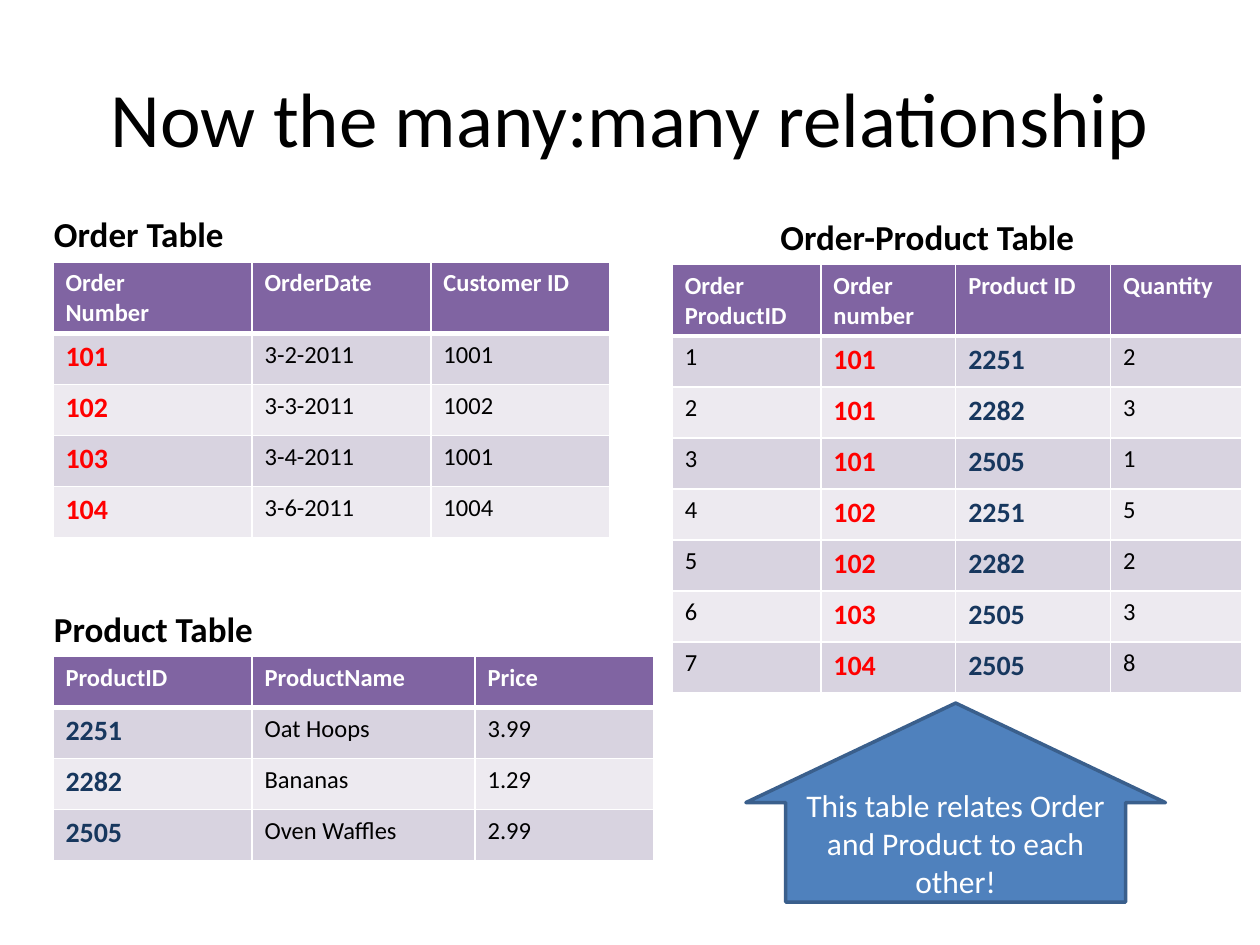
from collections import namedtuple

from lxml import etree
from pptx import Presentation
from pptx import util as u
from pptx.dml.color import RGBColor
from pptx.enum import shapes, text
from pptx.oxml import ns

WHITE = RGBColor(0xFF, 0xFF, 0xFF)
BLACK = RGBColor(0, 0, 0)
RED = RGBColor(0xFF, 0, 0)
NAVY = RGBColor(0x17, 0x37, 0x5E)
PURPLE = RGBColor(0x80, 0x64, 0xA2)
BANDS = (RGBColor(0xED, 0xEA, 0xF0), RGBColor(0xD8, 0xD3, 0xE0))
BLUE = RGBColor(0x4F, 0x81, 0xBD)
BLUE_EDGE = RGBColor(0x3A, 0x5F, 0x8C)

COLUMNS, ROWS = 20, 15
CELL = u.Inches(0.5)
TABLE_ROW = 0.81
HEADING_HEIGHT = 0.88
HEADING_OUTDENT = -0.18
Box = namedtuple("Box", "left top width height")


def grid(box):
    """Turn a box in grid columns and rows into slide lengths."""
    return [round(side * CELL) for side in box]


def write(frame, words, size=14, color=BLACK, bold=False, align=None):
    """Put formatted words into a text frame."""
    para = frame.paragraphs[0]
    para.text = words
    para.alignment = align
    for span in para.runs:
        span.font.name = "Calibri"
        span.font.size = u.Pt(size)
        span.font.color.rgb = color
        span.font.bold = bold


def label(page, box, words, wrap=True, anchor=text.MSO_ANCHOR.TOP, **style):
    """Add a text box."""
    frame = page.shapes.add_textbox(*grid(box)).text_frame
    frame.word_wrap = wrap
    frame.vertical_anchor = anchor
    write(frame, words, **style)


def border(cell, bottom):
    """Draw white borders around a cell, with its own bottom width."""
    properties = cell._tc.get_or_add_tcPr()
    for side, width in zip("LRTB", (1, 1, 1, bottom)):
        line = etree.SubElement(properties, ns.qn("a:ln" + side), w=str(u.Pt(width)))
        fill = etree.SubElement(line, ns.qn("a:solidFill"))
        etree.SubElement(fill, ns.qn("a:srgbClr"), val=str(WHITE))


def data_table(page, box, heading, widths, records, keys, inset=HEADING_OUTDENT, span=3.5):
    """Add a banded table with key columns coloured and a heading above."""
    label(page, Box(box.left + inset, box.top - HEADING_HEIGHT, span, HEADING_HEIGHT),
          heading, wrap=False, size=20, bold=True)
    table = page.shapes.add_table(len(records), len(widths), *grid(box)).table
    for column, width in zip(table.columns, widths):
        column.width = round(width * CELL)
    for number, record in enumerate(records):
        table.rows[number].height = round(TABLE_ROW * CELL)
        for column, words in enumerate(record):
            cell = table.cell(number, column)
            header = number == 0
            border(cell, 3 if header else 1)
            cell.fill.solid()
            cell.fill.fore_color.rgb = PURPLE if header else BANDS[number % 2]
            if header:
                style = dict(color=WHITE, bold=True)
            elif column in keys:
                style = dict(size=16, color=keys[column], bold=True)
            else:
                style = {}
            write(cell.text_frame, words, **style)


def callout(page, box, words):
    """Add the upward arrow with its message."""
    arrow = page.shapes.add_shape(shapes.MSO_SHAPE.UP_ARROW, *grid(box))
    arrow.shadow.inherit = False
    arrow.adjustments[0] = 0.81
    arrow.adjustments[1] = 0.5
    arrow.fill.solid()
    arrow.fill.fore_color.rgb = BLUE
    arrow.line.color.rgb = BLUE_EDGE
    arrow.line.width = u.Pt(2)
    arrow.text_frame.word_wrap = True
    arrow.text_frame.vertical_anchor = text.MSO_ANCHOR.MIDDLE
    write(arrow.text_frame, words, size=18, color=WHITE, align=text.PP_ALIGN.CENTER)


def main():
    """Build the slide and save it."""
    deck = Presentation()
    deck.slide_width, deck.slide_height = COLUMNS * CELL, ROWS * CELL
    page = deck.slides.add_slide(deck.slide_layouts[6])

    label(page, Box(1, 0.6, 18, 2.5), "Now the many:many relationship", size=44,
          anchor=text.MSO_ANCHOR.MIDDLE, align=text.PP_ALIGN.CENTER)

    orders = [
        ("Order\nNumber", "OrderDate", "Customer ID"),
        ("101", "3-2-2011", "1001"),
        ("102", "3-3-2011", "1002"),
        ("103", "3-4-2011", "1001"),
        ("104", "3-6-2011", "1004"),
    ]
    data_table(page, Box(0.84, 4.16, 8.84, 5 * TABLE_ROW), "Order Table",
               (3.16, 2.84, 2.84), orders, {0: RED})

    products = [
        ("ProductID", "ProductName", "Price"),
        ("2251", "Oat Hoops", "3.99"),
        ("2282", "Bananas", "1.29"),
        ("2505", "Oven Waffles", "2.99"),
    ]
    data_table(page, Box(0.84, 10.42, 9.54, 4 * TABLE_ROW), "Product Table",
               (3.16, 3.54, 2.84), products, {0: NAVY}, span=4.1)

    order_products = [
        ("Order\nProductID", "Order number", "Product ID", "Quantity"),
        ("1", "101", "2251", "2"),
        ("2", "101", "2282", "3"),
        ("3", "101", "2505", "1"),
        ("4", "102", "2251", "5"),
        ("5", "102", "2282", "2"),
        ("6", "103", "2505", "3"),
        ("7", "104", "2505", "8"),
    ]
    data_table(page, Box(10.67, 4.2, 9.04, 8 * TABLE_ROW), "Order-Product Table",
               (2.36, 2.14, 2.46, 2.08), order_products, {1: RED, 2: NAVY},
               inset=1.52, span=5.82)

    callout(page, Box(11.84, 11.16, 6.66, 3.16),
            "This table relates Order and Product to each other!")
    deck.save("out.pptx")


if __name__ == "__main__":
    main()
